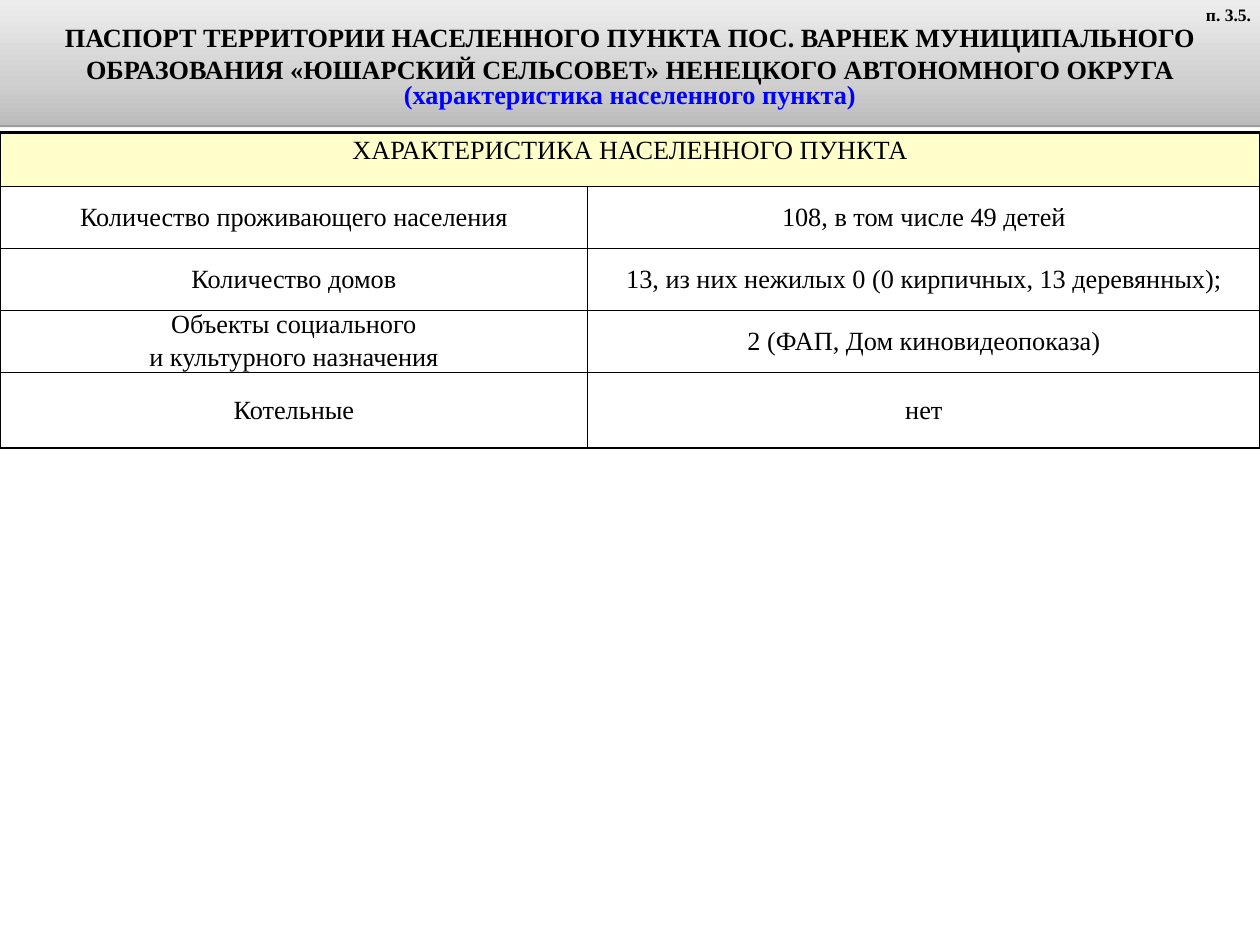
from dataclasses import dataclass

from lxml import etree
from pptx import Presentation
from pptx import util as u
from pptx.dml.color import RGBColor
from pptx.enum import text
from pptx.oxml import parse_xml
from pptx.oxml.ns import qn

FONT = "Times New Roman"
INK = {"black": "000000", "blue": "0000FF", "cream": "FFFFCC",
       "low": "BCBCBC", "mid": "D0D0D0", "high": "EDEDED"}
NS = 'xmlns:a="http://schemas.openxmlformats.org/drawingml/2006/main"'
THICK, THIN = 2.25, 1


@dataclass
class Row:
    high: float
    cells: list[str]
    side: float
    edge: float


ROWS = [
    Row(0.6, ["ХАРАКТЕРИСТИКА НАСЕЛЕННОГО ПУНКТА", ""], 0.07, 0.04),
    Row(0.69, ["Количество проживающего населения",
               "108, в том числе 49 детей"], 0.14, 0.07),
    Row(0.69, ["Количество домов",
               "13, из них нежилых 0 (0 кирпичных, 13 деревянных);"], 0.14, 0.07),
    Row(0.69, ["Объекты социального\nи культурного назначения",
               "2 (ФАП, Дом киновидеопоказа)"], 0.07, 0),
    Row(0.84, ["Котельные", "нет"], 0.07, 0),
]
COLS = [6.53, 7.47]


def add_run(par, words: str, size: float = 21, ink: str = "black",
            bold: bool = False) -> None:
    run = par.add_run()
    run.text = words
    font = run.font
    font.name, font.size, font.bold = FONT, u.Pt(size), bold
    font.color.rgb = RGBColor.from_string(INK[ink])


def add_par(frame, first: bool, align=text.PP_ALIGN.CENTER):
    par = frame.paragraphs[0] if first else frame.add_paragraph()
    par.alignment = align
    return par


def set_edge(cell, side: str, width: float) -> None:
    line = etree.SubElement(cell._tc.get_or_add_tcPr(), qn(f"a:ln{side}"),
                            w=str(int(u.Pt(width))))
    fill = etree.SubElement(line, qn("a:solidFill"))
    etree.SubElement(fill, qn("a:srgbClr"), val=INK["black"])


def draw_head(slide) -> None:
    head = slide.shapes.title
    head.left, head.top = u.Inches(0), u.Inches(0)
    head.width, head.height = u.Inches(14), u.Inches(1.39)
    stops = "".join(
        f'<a:gs pos="{pos * 1000}"><a:srgbClr val="{INK[ink]}"/></a:gs>'
        for pos, ink in [(0, "low"), (35, "mid"), (100, "high")])
    props = head._element.spPr
    props.append(parse_xml(
        f'<a:gradFill {NS} rotWithShape="1"><a:gsLst>{stops}</a:gsLst>'
        '<a:lin ang="16200000" scaled="1"/></a:gradFill>'))
    head.line.fill.background()
    props.append(parse_xml(
        f'<a:effectLst {NS}><a:outerShdw blurRad="0" dist="{int(u.Pt(1.6))}" '
        f'dir="5400000" rotWithShape="0"><a:srgbClr val="{INK["black"]}">'
        '<a:alpha val="38000"/></a:srgbClr></a:outerShdw></a:effectLst>'))
    frame = head.text_frame
    frame.word_wrap = True
    frame.auto_size = text.MSO_AUTO_SIZE.NONE
    frame.vertical_anchor = text.MSO_ANCHOR.MIDDLE
    frame.margin_left = frame.margin_right = u.Inches(0.1)
    frame.margin_top, frame.margin_bottom = u.Inches(0.12), u.Inches(0.05)
    add_run(add_par(frame, True),
            "ПАСПОРТ ТЕРРИТОРИИ НАСЕЛЕННОГО ПУНКТА ПОС. ВАРНЕК МУНИЦИПАЛЬНОГО "
            "ОБРАЗОВАНИЯ «ЮШАРСКИЙ СЕЛЬСОВЕТ» НЕНЕЦКОГО АВТОНОМНОГО ОКРУГА",
            bold=True)
    par = add_par(frame, False)
    par.line_spacing = 0.8
    add_run(par, "(характеристика населенного пункта)", ink="blue", bold=True)


def draw_cell(cell, row: Row, words: str, top: bool) -> None:
    cell.margin_left = cell.margin_right = u.Inches(row.side)
    cell.margin_top = cell.margin_bottom = u.Inches(row.edge)
    if top:
        cell.vertical_anchor = text.MSO_ANCHOR.TOP
        cell.fill.solid()
        cell.fill.fore_color.rgb = RGBColor.from_string(INK["cream"])
    else:
        cell.vertical_anchor = text.MSO_ANCHOR.MIDDLE
        cell.fill.background()
    if not words:
        return
    for i, part in enumerate(words.split("\n")):
        par = add_par(cell.text_frame, i == 0)
        if i:
            par.space_before = u.Pt(3)
        add_run(par, part)


def draw_table(slide) -> None:
    table = slide.shapes.add_table(
        len(ROWS), len(COLS), u.Inches(0), u.Inches(1.47), u.Inches(14),
        u.Inches(sum(row.high for row in ROWS))).table
    table.first_row = table.horz_banding = False
    for col, wide in zip(table.columns, COLS):
        col.width = u.Inches(wide)
    table.cell(0, 0).merge(table.cell(0, 1))
    for r, row in enumerate(ROWS):
        table.rows[r].height = u.Inches(row.high)
        for c, words in enumerate(row.cells):
            cell = table.cell(r, c)
            outer = {"L": c == 0, "R": c == 1 or r == 0,
                     "T": r == 0, "B": r == len(ROWS) - 1}
            for side, out in outer.items():
                set_edge(cell, side, THICK if out else THIN)
            draw_cell(cell, row, words, r == 0)


def draw_mark(slide) -> None:
    box = slide.shapes.add_textbox(u.Inches(13.21), u.Inches(0),
                                   u.Inches(0.79), u.Inches(0.33))
    frame = box.text_frame
    frame.word_wrap = True
    frame.auto_size = text.MSO_AUTO_SIZE.SHAPE_TO_FIT_TEXT
    add_run(add_par(frame, True, text.PP_ALIGN.RIGHT), "п. 3.5.", 14, bold=True)


def main() -> None:
    deck = Presentation()
    deck.slide_width, deck.slide_height = u.Inches(14), u.Inches(10.5)
    slide = deck.slides.add_slide(deck.slide_layouts[5])
    draw_head(slide)
    draw_table(slide)
    draw_mark(slide)
    deck.save("out.pptx")


if __name__ == "__main__":
    main()
